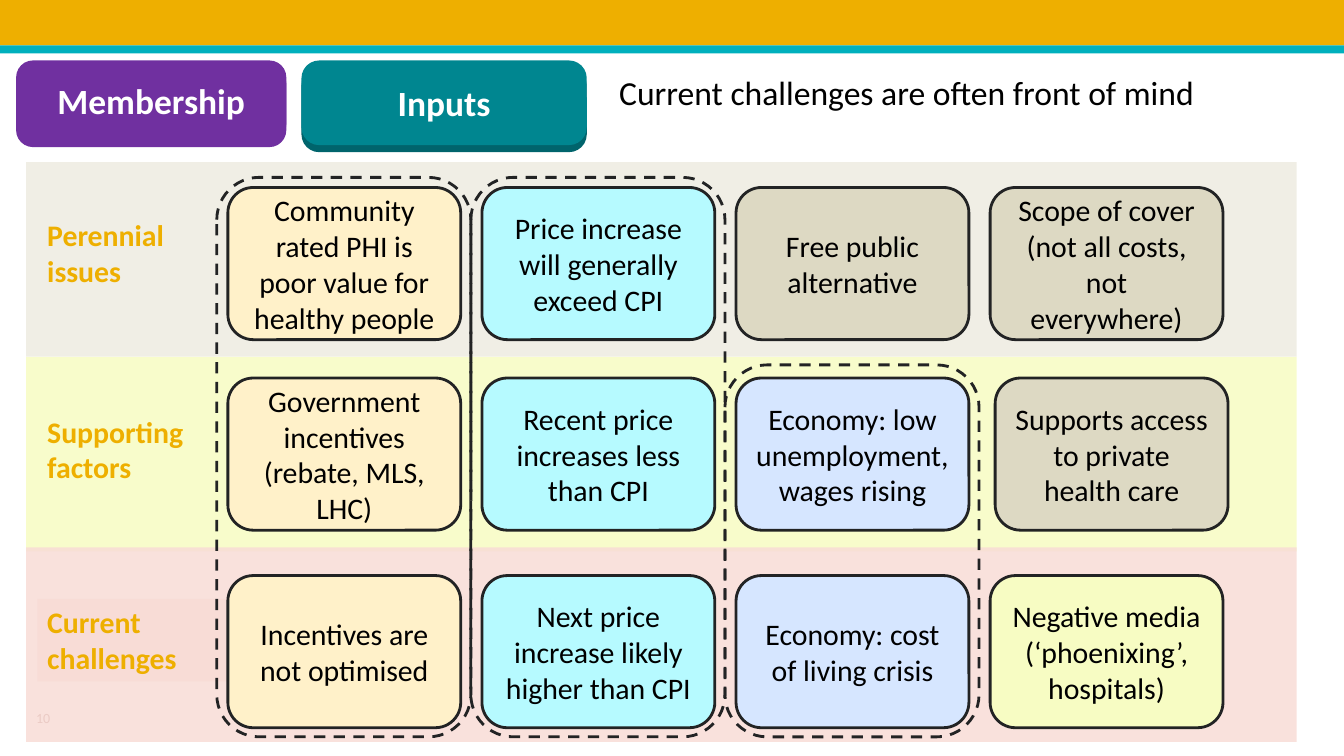
import pptx
import pptx.util
import pptx.dml.color
import pptx.enum.dml
import pptx.enum.shapes
import pptx.enum.text
import pptx.oxml.ns
import lxml.etree

GOLD, TEAL, INK = "EEAF00", "00B0BD", "222324"
CREAM, AQUA, STONE, BLUE, LIME = "FFF1C9", "B6FAFF", "DDD9C3", "D6E6FF", "F7FCC3"
TITLE = "Current challenges are often front of mind"
BADGES = [
    ("Membership", 0.16, 2.68, 0.80, 0.06, "7030A0", "7030A0"),
    ("Inputs", 2.99, 2.83, 0.84, 0.07, "008690", "00646C"),
]
ROWS = [
    {"label": "Perennial issues", "band": "EEECE1", "tops": (1.61, 2.10, 1.86), "cards": [
        ("Community rated PHI is poor value for healthy people", CREAM),
        ("Price increase will generally exceed CPI", AQUA),
        ("Free public alternative", STONE),
        ("Scope of cover (not all costs, not everywhere)", STONE)]},
    {"label": "Supporting factors", "band": LIME, "tops": (3.54, 4.05, 3.75), "cards": [
        ("Government incentives (rebate, MLS, LHC)", CREAM),
        ("Recent price increases less than CPI", AQUA),
        ("Economy: low unemployment, wages rising", BLUE),
        ("Supports access to private health care", STONE)]},
    {"label": "Current challenges", "band": "F8DCD6", "tops": (5.43, 5.94, 5.71), "cards": [
        ("Incentives are not optimised", CREAM),
        ("Next price increase likely higher than CPI", AQUA),
        ("Economy: cost of living crisis", BLUE),
        ("Negative media (‘phoenixing’, hospitals)", LIME)]},
]
THEME_TOPS = [1.76, 1.76, 3.62]
THEME_BOTTOM = 7.31
CARD_LEFT, COLUMN_STEP, CARD_WIDTH, CARD_HEIGHT = 2.26, 2.52, 2.31, 1.51
LAST_CARD_SHIFT = {1: 0.05}

RECT = pptx.enum.shapes.MSO_SHAPE.RECTANGLE
ROUND = pptx.enum.shapes.MSO_SHAPE.ROUNDED_RECTANGLE
LEFT, CENTER = pptx.enum.text.PP_ALIGN.LEFT, pptx.enum.text.PP_ALIGN.CENTER
TOP, MIDDLE = pptx.enum.text.MSO_ANCHOR.TOP, pptx.enum.text.MSO_ANCHOR.MIDDLE


def rgb(color):
    return pptx.dml.color.RGBColor.from_string(color)


def inches(*lengths):
    return [pptx.util.Inches(length) for length in lengths]


def write(holder, text, size=21.3, color="000000", bold=False, align=LEFT, anchor=TOP):
    frame = holder.text_frame
    frame.word_wrap = True
    frame.auto_size = pptx.enum.text.MSO_AUTO_SIZE.NONE
    frame.vertical_anchor = anchor
    paragraph = frame.paragraphs[0]
    paragraph.alignment = align
    run = paragraph.add_run()
    run.text = text
    run.font.name = "Calibri"
    run.font.size = pptx.util.Pt(size)
    run.font.bold = bold
    run.font.color.rgb = rgb(color)


def block(slide, at, kind=RECT, fill=None, line=None, dashed=False, alpha=None, radius=None):
    shape = slide.shapes.add_shape(kind, *inches(*at))
    shape.shadow.inherit = False
    if fill:
        shape.fill.solid()
        shape.fill.fore_color.rgb = rgb(fill)
    else:
        shape.fill.background()
    if alpha:
        tint = shape.fill._xPr.find(".//" + pptx.oxml.ns.qn("a:srgbClr"))
        lxml.etree.SubElement(tint, pptx.oxml.ns.qn("a:alpha"), val=str(alpha * 1000))
    if line:
        shape.line.color.rgb = rgb(line)
        shape.line.width = pptx.util.Pt(2)
    else:
        shape.line.fill.background()
    if dashed:
        shape.line.dash_style = pptx.enum.dml.MSO_LINE.DASH
    if radius:
        shape.adjustments[0] = radius
    return shape


def main():
    deck = pptx.Presentation()
    deck.slide_width, deck.slide_height = inches(13.33, 7.5)
    slide = deck.slides.add_slide(deck.slide_layouts[5])
    block(slide, (0, 0, 13.33, 0.45), fill=GOLD)
    block(slide, (0, 0.45, 13.33, 0.08), fill=TEAL)

    for name, left, width, height, depth, face, edge in BADGES:
        block(slide, (left, 0.6 + depth, width, height), ROUND, edge, radius=0.21)
        badge = block(slide, (left, 0.6, width, height), ROUND, face, radius=0.21)
        write(badge, name, 25.3, "FFFFFF", True, CENTER, MIDDLE)

    for row in ROWS:
        block(slide, (0.26, row["tops"][0], 12.6, 1.93), fill=row["band"], alpha=85)

    page_number = slide.shapes.add_textbox(*inches(0.26, 6.94, 0.6, 0.36))
    write(page_number, "10", 10, "EBCBC5", anchor=MIDDLE)

    for index, row in enumerate(ROWS):
        band_top, label_top, card_top = row["tops"]
        label_fill = row["band"] if row is ROWS[-1] else None
        label = block(slide, (0.37, label_top, 1.89, 0.82), fill=label_fill)
        write(label, row["label"], color=GOLD, bold=True)
        for column, (text, fill) in enumerate(row["cards"]):
            shift = LAST_CARD_SHIFT.get(index, 0) if column == 3 else 0
            left = CARD_LEFT + column * COLUMN_STEP + shift
            card = block(slide, (left, card_top, CARD_WIDTH, CARD_HEIGHT), ROUND, fill, INK)
            write(card, text, align=CENTER, anchor=MIDDLE)

    for column, top in enumerate(THEME_TOPS):
        left = CARD_LEFT - 0.11 + column * COLUMN_STEP
        block(slide, (left, top, COLUMN_STEP, THEME_BOTTOM - top), ROUND, line=INK, dashed=True)

    title = slide.shapes.title
    title.left, title.top, title.width, title.height = inches(6.04, 0.66, 7.13, 0.5)
    write(title, TITLE, 24)
    deck.save("out.pptx")


if __name__ == "__main__":
    main()
